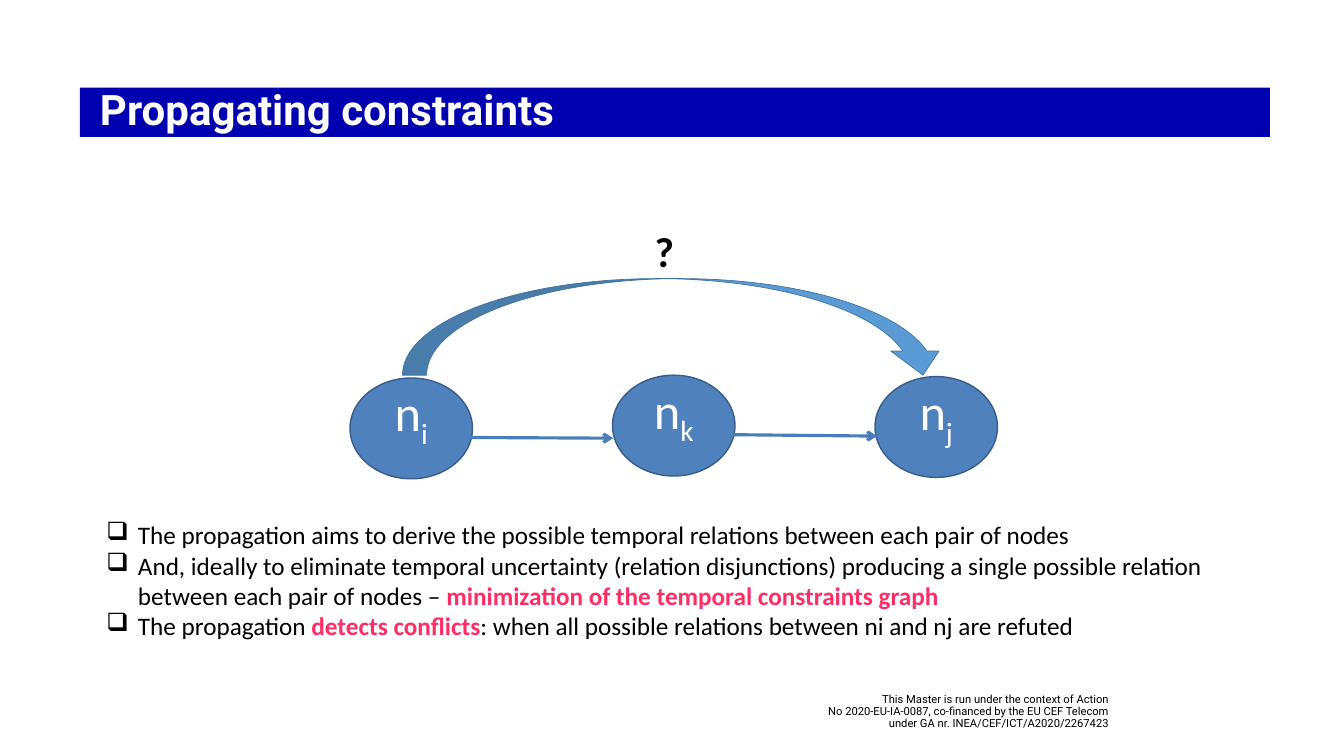
from lxml.etree import SubElement as Sub
from pptx import Presentation
from pptx.dml.color import RGBColor as Rgb
from pptx.enum.shapes import MSO_CONNECTOR as Link, MSO_SHAPE as Kind
from pptx.enum.text import MSO_ANCHOR as Anchor, MSO_AUTO_SIZE as Auto, PP_ALIGN as Align
from pptx.oxml.ns import qn
from pptx.util import Pt

THEME = {
    "head": "Roboto", "body": "Calibri",
    "black": "000000", "white": "FFFFFF", "bar": "0000B0", "pink": "FF2D64",
    "node": "4F81BD", "rim": "385D8A", "link": "4A7EBB",
    "arc": "5B9BD5", "edge": "43739E",
    "title": 60, "mark": 60, "label": 72, "text": 36, "foot": 16,
}

TITLE = "Propagating constraints"
MARK = "?"
NODES = [("i", 540), ("k", 536), ("j", 538)]
LINKS = [(670, 625, 876, 626), (1047, 621, 1253, 623)]
POINTS = [
    [("The propagation aims to derive the possible temporal relations between each pair of nodes", False)],
    [("And, ideally to eliminate temporal uncertainty (relation disjunctions) producing a single "
      "possible relation between each pair of nodes – ", False),
     ("minimization of the temporal constraints graph", True)],
    [("The propagation ", False), ("detects conflicts", True),
     (": when all possible relations between ni and nj are refuted", False)],
]
FOOT = [
    "This Master is run under the context of Action",
    "No 2020-EU-IA-0087, co-financed by the EU CEF Telecom",
    "under GA nr. INEA/CEF/ICT/A2020/2267423",
]


def tint(name):
    return Rgb.from_string(THEME[name])


def put(para, text, size, face="body", color="black", bold=False):
    run = para.add_run()
    run.text = text
    font = run.font
    font.size, font.name, font.bold = Pt(THEME[size]), THEME[face], bold
    font.color.rgb = tint(color)
    return run


def add_box(slide, x, y, w, h):
    frame = slide.shapes.add_textbox(Pt(x), Pt(y), Pt(w), Pt(h)).text_frame
    frame.word_wrap = True
    return frame


def add_form(slide, kind, x, y, w, h, fill, line, width):
    form = slide.shapes.add_shape(kind, Pt(x), Pt(y), Pt(w), Pt(h))
    form.shadow.inherit = False
    form.fill.solid()
    form.fill.fore_color.rgb = tint(fill)
    form.line.color.rgb = tint(line)
    form.line.width = Pt(width)
    return form


def add_title(slide):
    bar = slide.shapes.title
    bar.left, bar.top, bar.width, bar.height = Pt(114), Pt(125), Pt(1700), Pt(70.5)
    bar.fill.solid()
    bar.fill.fore_color.rgb = tint("bar")
    frame = bar.text_frame
    frame.auto_size = Auto.NONE
    frame.word_wrap = True
    frame.vertical_anchor = Anchor.MIDDLE
    frame.margin_left, frame.margin_right = Pt(28.8), Pt(7.2)
    frame.margin_top = frame.margin_bottom = Pt(3.6)
    para = frame.paragraphs[0]
    para.alignment, para.line_spacing, para.space_before = Align.LEFT, 0.9, Pt(0)
    put(para, TITLE, "title", "head", "white", True)


def add_node(slide, x, y, sub):
    frame = add_form(slide, Kind.OVAL, x, y, 175, 144, "node", "rim", 2).text_frame
    frame.word_wrap = True
    frame.vertical_anchor = Anchor.MIDDLE
    frame.margin_bottom = Pt(54)
    para = frame.paragraphs[0]
    para.alignment, para.line_spacing = Align.CENTER, 1.15
    put(para, "n", "label", color="white")
    low = put(para, sub, "label", color="white")
    low.font._element.set("baseline", "-25000")


def add_link(slide, *ends):
    link = slide.shapes.add_connector(Link.STRAIGHT, *map(Pt, ends))
    link.line.color.rgb = tint("link")
    link.line.width = Pt(4.5)
    Sub(link.line._get_or_add_ln(), qn("a:tailEnd"), type="arrow")
    Sub(link._element.spPr, qn("a:effectLst"))


def add_points(slide):
    frame = add_box(slide, 145, 739, 1608, 225)
    for n, runs in enumerate(POINTS):
        para = frame.add_paragraph() if n else frame.paragraphs[0]
        props = para._p.get_or_add_pPr()
        props.set("marL", str(Pt(45)))
        props.set("indent", str(-Pt(45)))
        Sub(props, qn("a:buChar"), char="❑")
        for text, key in runs:
            put(para, text, "text", color="pink" if key else "black", bold=key)


def add_foot(slide):
    frame = add_box(slide, 1081, 989, 510, 55)
    frame.vertical_anchor = Anchor.MIDDLE
    para = frame.paragraphs[0]
    para.alignment, para.line_spacing = Align.RIGHT, 0.9
    for n, text in enumerate(FOOT):
        if n:
            para.add_line_break()
        put(para, text, "foot", "head")


def main():
    deck = Presentation()
    deck.slide_width, deck.slide_height = Pt(1920), Pt(1080)
    slide = deck.slides.add_slide(deck.slide_layouts[5])
    add_title(slide)
    add_foot(slide)
    for n, (sub, y) in enumerate(NODES):
        add_node(slide, 500 + n * 375, y, sub)
    for ends in LINKS:
        add_link(slide, *ends)
    add_form(slide, Kind.CURVED_DOWN_ARROW, 575, 398, 778, 138, "arc", "edge", 1)
    mark = add_box(slide, 907, 318, 84, 80).paragraphs[0]
    mark.alignment = Align.CENTER
    put(mark, MARK, "mark", bold=True)
    add_points(slide)
    deck.save("out.pptx")


if __name__ == "__main__":
    main()
